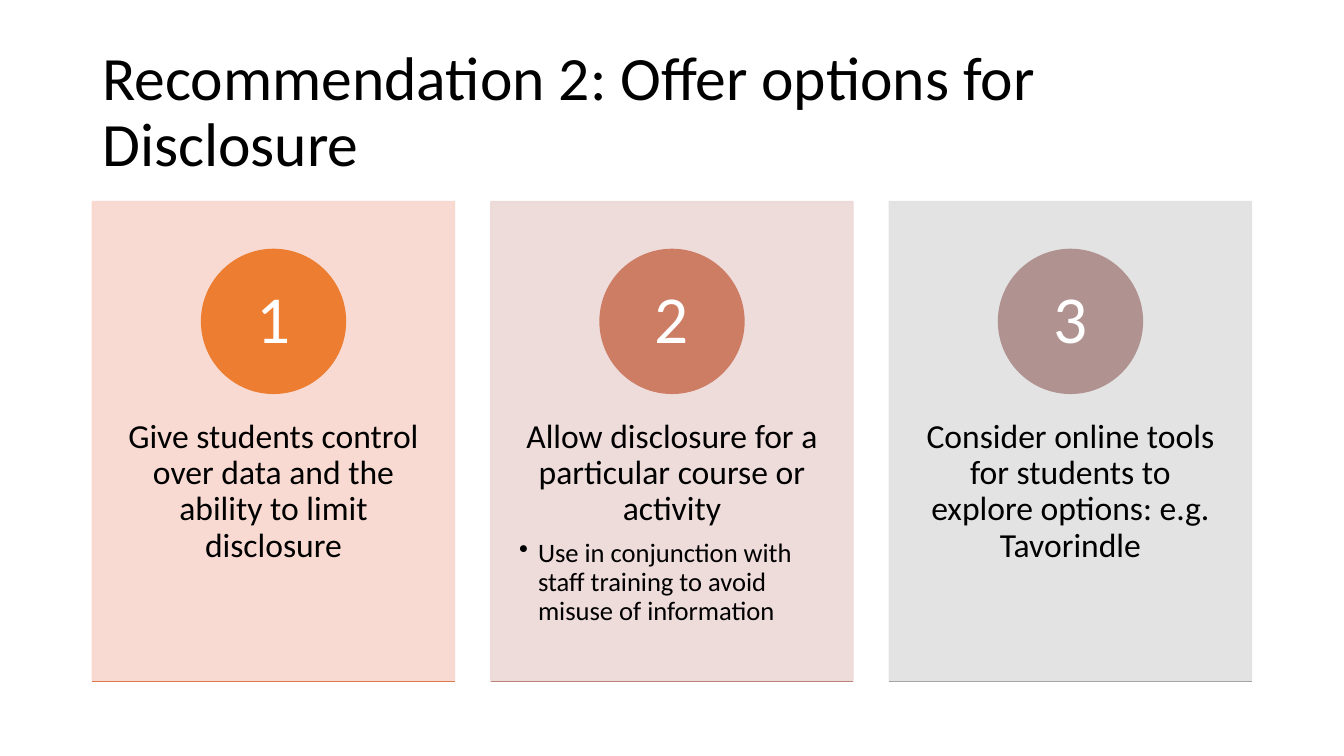
"""Build a slide with three numbered recommendation cards."""
from dataclasses import dataclass

from lxml.etree import SubElement
from pptx import Presentation
from pptx.dml.color import RGBColor
from pptx.enum.shapes import MSO_CONNECTOR, MSO_SHAPE
from pptx.enum.text import MSO_ANCHOR, PP_ALIGN
from pptx.oxml.ns import qn
from pptx.util import Pt

TITLE = "Recommendation 2: Offer options for Disclosure"
CARDS = [
    {"advice": "Give students control over data and the ability to limit disclosure",
     "details": [], "panel": "F8D7CE", "badge": "ED7D31", "rule": "DC7A4B"},
    {"advice": "Allow disclosure for a particular course or activity",
     "details": ["Use in conjunction with staff training to avoid misuse of information"],
     "panel": "EDD9D7", "badge": "CC7D64", "rule": "BD867B"},
    {"advice": "Consider online tools for students to explore options: e.g. Tavorindle",
     "details": [], "panel": "E1E1E1", "badge": "B09391", "rule": "A5A5A5"},
]


@dataclass(frozen=True)
class Theme:
    font: str = "Calibri"
    ink: str = "000000"
    badge_ink: str = "FFFFFF"
    title_size: float = 44
    badge_size: float = 48
    advice_size: float = 24
    detail_size: float = 19
    panel_opacity: int = 90


THEME = Theme()
SLIDE_W, SLIDE_H = 960, 540
MARGIN, CARD_TOP, CARD_W, CARD_H, GAP = 66, 144, 258.75, 342.65, 25.87
BADGE_TOP, BADGE = 178.15, 102.8
ADVICE_TOP, ADVICE_H = 273.6, 205.6
DETAIL_INDENT = 13.5


def box(left, top, width, height):
    return Pt(left), Pt(top), Pt(width), Pt(height)


def style(paragraph, size, color, align=PP_ALIGN.LEFT, space_after=0):
    paragraph.font.name = THEME.font
    paragraph.font.size = Pt(size)
    paragraph.font.color.rgb = RGBColor.from_string(color)
    paragraph.alignment = align
    paragraph.line_spacing = 0.9
    paragraph.space_before = Pt(0)
    paragraph.space_after = Pt(space_after * size)


def set_frame(frame, inset_x, inset_y, anchor):
    frame.word_wrap = True
    frame.margin_left = frame.margin_right = Pt(inset_x)
    frame.margin_top = frame.margin_bottom = Pt(inset_y)
    frame.vertical_anchor = anchor


def add_bullet(paragraph, indent):
    properties = paragraph._p.get_or_add_pPr()
    properties.set("marL", str(Pt(indent)))
    properties.set("indent", str(-Pt(indent)))
    SubElement(properties, qn("a:buChar")).set("char", "•")


def add_solid(slide, kind, bounds, color):
    solid = slide.shapes.add_shape(kind, *bounds)
    solid.shadow.inherit = False
    solid.fill.solid()
    solid.fill.fore_color.rgb = RGBColor.from_string(color)
    solid.line.color.rgb = RGBColor.from_string(color)
    solid.line.width = Pt(1)
    return solid


def add_title(slide):
    frame = slide.shapes.add_textbox(*box(MARGIN, 28.75, 828, 104.4)).text_frame
    set_frame(frame, 7.2, 3.6, MSO_ANCHOR.MIDDLE)
    frame.text = TITLE
    style(frame.paragraphs[0], THEME.title_size, THEME.ink)


def add_card(slide, index, card):
    left = MARGIN + index * (CARD_W + GAP)
    bottom = CARD_TOP + CARD_H

    panel = add_solid(slide, MSO_SHAPE.RECTANGLE,
                      box(left, CARD_TOP, CARD_W, CARD_H), card["panel"])
    for color in panel._element.spPr.iter(qn("a:srgbClr")):
        SubElement(color, qn("a:alpha")).set("val", str(THEME.panel_opacity * 1000))

    body = slide.shapes.add_textbox(*box(left, ADVICE_TOP, CARD_W, ADVICE_H)).text_frame
    set_frame(body, 20.2, 25.9, MSO_ANCHOR.TOP)
    body.text = card["advice"]
    style(body.paragraphs[0], THEME.advice_size, THEME.ink, PP_ALIGN.CENTER, 0.35)
    for text in card["details"]:
        detail = body.add_paragraph()
        detail.text = text
        detail.level = 1
        style(detail, THEME.detail_size, THEME.ink, space_after=0.15)
        add_bullet(detail, DETAIL_INDENT)

    badge = add_solid(slide, MSO_SHAPE.OVAL,
                      box(left + (CARD_W - BADGE) / 2, BADGE_TOP, BADGE, BADGE),
                      card["badge"])
    set_frame(badge.text_frame, 8, 0.9, MSO_ANCHOR.MIDDLE)
    badge.text_frame.text = str(index + 1)
    style(badge.text_frame.paragraphs[0], THEME.badge_size, THEME.badge_ink,
          PP_ALIGN.CENTER, 0.35)

    rule = slide.shapes.add_connector(MSO_CONNECTOR.STRAIGHT, Pt(left), Pt(bottom),
                                      Pt(left + CARD_W), Pt(bottom))
    rule.line.color.rgb = RGBColor.from_string(card["rule"])
    rule.line.width = Pt(1)
    SubElement(rule._element.spPr, qn("a:effectLst"))


def main():
    deck = Presentation()
    deck.slide_width, deck.slide_height = Pt(SLIDE_W), Pt(SLIDE_H)
    slide = deck.slides.add_slide(deck.slide_layouts[6])
    add_title(slide)
    for index, card in enumerate(CARDS):
        add_card(slide, index, card)
    deck.save("out.pptx")


if __name__ == "__main__":
    main()
